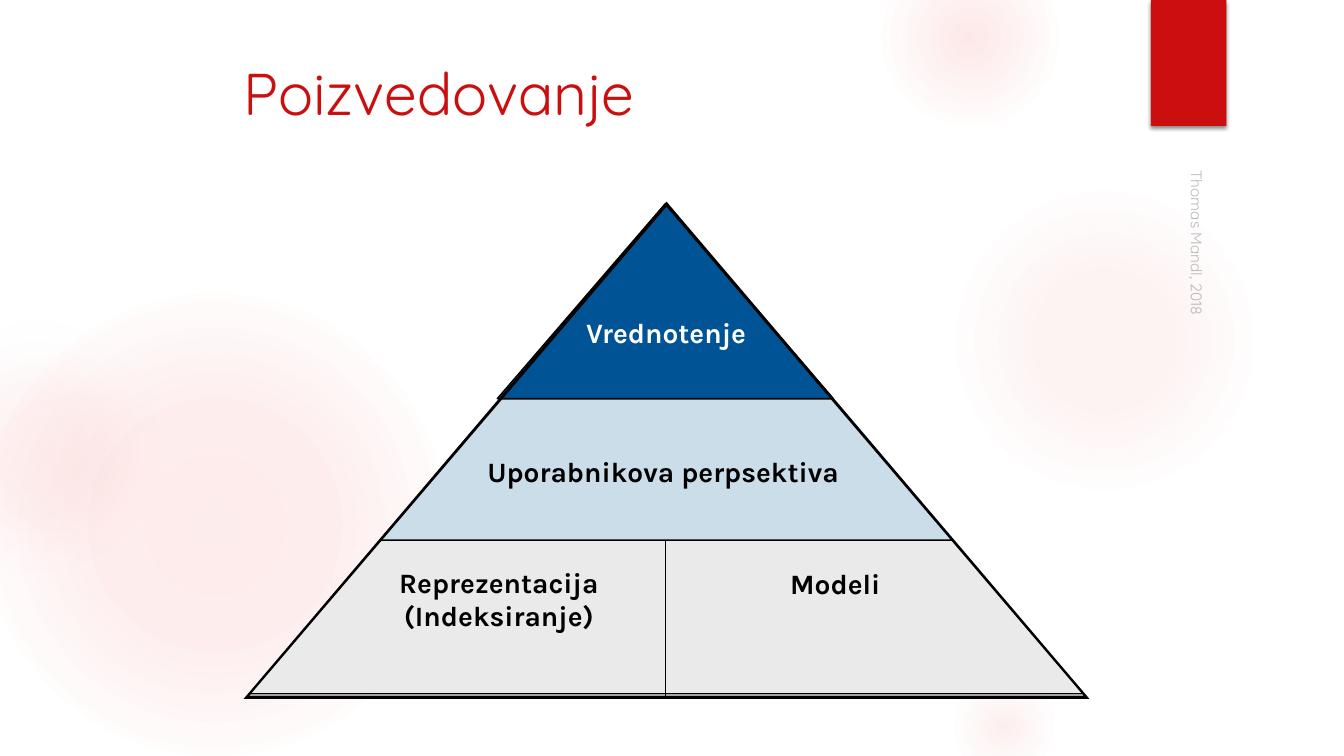
from dataclasses import dataclass

from lxml.etree import SubElement
from pptx import Presentation
from pptx.dml.color import RGBColor
from pptx.enum.shapes import MSO_CONNECTOR, MSO_SHAPE
from pptx.enum.text import MSO_ANCHOR, MSO_AUTO_SIZE, PP_ALIGN
from pptx.oxml.ns import qn
from pptx.util import Inches, Pt

COLUMNS_PER_INCH = 12
COLUMNS, ROWS = 160, 90


@dataclass(frozen=True)
class Theme:
    """Colours, fonts and type sizes of the slide."""
    accent: str = "CB0F0F"
    glow: str = "F35C5C"
    glow_edge: str = "F3F3F3"
    peak: str = "005496"
    middle: str = "CCDDEA"
    base: str = "EAEAEA"
    ink: str = "000000"
    paper: str = "FFFFFF"
    credit: str = "8C8C8C"
    heading_font: str = "Quicksand"
    label_font: str = "Karla"
    title_size: int = 42
    label_size: int = 20
    credit_size: int = 11


THEME = Theme()


@dataclass(frozen=True)
class Box:
    """A rectangle in grid columns and rows."""
    left: float
    top: float
    width: float
    height: float

    def inside(self, left, top, width, height):
        """Return a box offset from this one's corner."""
        return Box(self.left + left, self.top + top, width, height)

    def lengths(self):
        """Return left, top, width and height as slide lengths."""
        return [grid(value) for value in (self.left, self.top, self.width, self.height)]


def grid(cells):
    """Turn a count of grid cells into a length."""
    return Inches(cells / COLUMNS_PER_INCH)


def colour(code):
    """Return the colour object of a hex code."""
    return RGBColor.from_string(code)


def add_xml(parent, tag, **attributes):
    """Append a DrawingML element with the given attributes."""
    return SubElement(parent, qn(f"a:{tag}"), {name: str(value) for name, value in attributes.items()})


def style(shape, fill, line=None, line_width=1):
    """Give a shape a flat fill, an optional outline and no shadow."""
    shape.shadow.inherit = False
    shape.fill.solid()
    shape.fill.fore_color.rgb = colour(fill)
    if line:
        shape.line.color.rgb = colour(line)
        shape.line.width = Pt(line_width)
    else:
        shape.line.fill.background()


def write(shape, text, *, size, font, color, bold=False, alpha=None, align=PP_ALIGN.LEFT,
          anchor=MSO_ANCHOR.TOP, insets=(0.1, 0.05), wrap=True, grow=False):
    """Fill a shape with one formatted paragraph."""
    frame = shape.text_frame
    frame.word_wrap = wrap
    frame.auto_size = MSO_AUTO_SIZE.SHAPE_TO_FIT_TEXT if grow else MSO_AUTO_SIZE.NONE
    frame.vertical_anchor = anchor
    frame.margin_left = frame.margin_right = Inches(insets[0])
    frame.margin_top = frame.margin_bottom = Inches(insets[1])
    paragraph = frame.paragraphs[0]
    paragraph.alignment = align
    run = paragraph.add_run()
    run.text = text
    run.font.size = Pt(size)
    run.font.name = font
    run.font.bold = bold
    run.font.color.rgb = colour(color)
    if alpha is not None:
        add_xml(run.font.fill._xPr.find(f".//{qn('a:srgbClr')}"), "alpha", val=alpha * 1000)


def add_glow(slide, box, stops):
    """Add a circle that fades out from its centre."""
    shape = slide.shapes.add_shape(MSO_SHAPE.OVAL, *box.lengths())
    style(shape, THEME.glow)
    properties = shape._element.spPr
    solid = properties.find(qn("a:solidFill"))
    gradient = add_xml(properties, "gradFill", rotWithShape=1)
    stop_list = add_xml(gradient, "gsLst")
    for position, code, alpha in stops:
        stop = add_xml(stop_list, "gs", pos=position * 1000)
        add_xml(add_xml(stop, "srgbClr", val=code), "alpha", val=alpha * 1000)
    centre = add_xml(gradient, "path", path="circle")
    add_xml(centre, "fillToRect", l=50000, t=50000, r=50000, b=50000)
    properties.replace(solid, gradient)


def add_backdrop(slide, box):
    """Place the soft circles and the flag at the top edge."""
    glow = THEME.glow
    circles = [
        (-2, 35, 55, (11, 36, 10, 75, glow)),
        (-11, 38, 31, (8, 36, 5, 71, THEME.glow_edge)),
        (113, 22, 37, (7, 36, 6, 69, glow)),
        (105, -6, 21, (14, 36, 7, 73, glow)),
        (113, 80, 13, (10, 31, 5, 66, glow)),
    ]
    for left, top, size, (core, middle, haze, edge, edge_colour) in circles:
        stops = [(0, glow, core), (middle, glow, haze), (edge, edge_colour, 0)]
        add_glow(slide, box.inside(left, top, size, size), stops)
    flag = slide.shapes.add_shape(MSO_SHAPE.RECTANGLE, *box.inside(137, 0, 9, 15).lengths())
    style(flag, THEME.accent)
    effects = flag._element.spPr.find(qn("a:effectLst"))
    shadow = add_xml(effects, "outerShdw", blurRad=Pt(3), dist=Pt(2), dir=5400000,
                     algn="ctr", rotWithShape=0)
    add_xml(add_xml(shadow, "srgbClr", val=THEME.ink), "alpha", val=45000)


def add_title(slide, box, text):
    """Move the title placeholder into the box, above the backdrop."""
    title = slide.shapes.title
    title.left, title.top, title.width, title.height = box.lengths()
    write(title, text, size=THEME.title_size, font=THEME.heading_font,
          color=THEME.accent, insets=(0, 0))
    slide.shapes._spTree.append(title._element)


def add_polygon(slide, contours, fill, line=None):
    """Add a filled outline made of one or more closed contours."""
    points = [[(grid(x), grid(y)) for x, y in contour] for contour in contours]
    builder = slide.shapes.build_freeform(*points[0][0])
    builder.add_line_segments(points[0][1:])
    for contour in points[1:]:
        builder.move_to(*contour[0])
        builder.add_line_segments(contour[1:])
    style(builder.convert_to_shape(), fill, line)


def add_band(slide, box, top, bottom, fill):
    """Add the slice of the pyramid between two rows."""
    centre = box.left + box.width / 2
    upper, lower = (box.width / 2 * row / box.height - 0.2 for row in (top, bottom))
    corners = [(centre - lower, box.top + bottom), (centre - upper, box.top + top),
               (centre + upper, box.top + top), (centre + lower, box.top + bottom)]
    add_polygon(slide, [corners], fill, THEME.ink)


def add_frame(slide, box):
    """Add the heavy triangular border of the pyramid."""
    contours = []
    for side, peak, foot in ((0, 0, 0), (0.7, 0.6, 0.4)):
        bottom = box.top + box.height - foot
        contours.append([(box.left + side, bottom), (box.left + box.width / 2, box.top + peak),
                         (box.left + box.width - side, bottom)])
    add_polygon(slide, contours, THEME.ink)


def add_label(slide, box, text, **options):
    """Add a bold centred label."""
    settings = dict(size=THEME.label_size, font=THEME.label_font, color=THEME.ink,
                    bold=True, align=PP_ALIGN.CENTER, wrap=False, grow=True)
    write(slide.shapes.add_textbox(*box.lengths()), text, **(settings | options))


def add_pyramid(slide, box):
    """Place the three levels, their border, labels and divider."""
    add_band(slide, box, 39.9, 58.6, THEME.base)
    peak = slide.shapes.add_shape(MSO_SHAPE.ISOSCELES_TRIANGLE,
                                  *box.inside(30.2, 0.25, 40, 23.2).lengths())
    peak.adjustments[0] = 0.5
    style(peak, THEME.peak, THEME.ink)
    add_band(slide, box, 23.5, 40.3, THEME.middle)
    add_frame(slide, box)
    add_label(slide, box.inside(64.8, 43.4, 11.3, 4.1), "Modeli", insets=(0, 0))
    add_label(slide, box.inside(13.2, 42.7, 34.4, 9.4), "Reprezentacija (Indeksiranje)", wrap=True)
    add_label(slide, box.inside(26.6, 29.5, 46.7, 5.3), "Uporabnikova perpsektiva")
    add_label(slide, box.inside(38.7, 13, 23.2, 5.3), "Vrednotenje", color=THEME.paper)
    left, top, _, height = box.inside(50.2, 40.3, 0, 18.7).lengths()
    divider = slide.shapes.add_connector(MSO_CONNECTOR.STRAIGHT, left, top, left, top + height)
    divider.line.color.rgb = colour(THEME.ink)
    divider.line.width = Pt(0.75)
    add_xml(divider._element.spPr, "effectLst")


def add_credit(slide, box, text):
    """Place the sideways credit line."""
    credit = slide.shapes.add_textbox(*box.lengths())
    credit.rotation = 90
    write(credit, text, size=THEME.credit_size, font=THEME.heading_font,
          color=THEME.credit, alpha=60, anchor=MSO_ANCHOR.BOTTOM)


def main():
    """Build and save the slide."""
    presentation = Presentation()
    presentation.slide_width, presentation.slide_height = grid(COLUMNS), grid(ROWS)
    slide = presentation.slides.add_slide(presentation.slide_layouts[5])
    add_backdrop(slide, Box(0, 0, COLUMNS, ROWS))
    add_title(slide, Box(29, 6.75, 102, 12), "Poizvedovanje")
    add_pyramid(slide, Box(29, 24, 100.7, 59.2))
    add_credit(slide, Box(117.5, 42.4, 50.6, 4), "Thomas Mandl, 2018")
    presentation.save("out.pptx")


if __name__ == "__main__":
    main()
